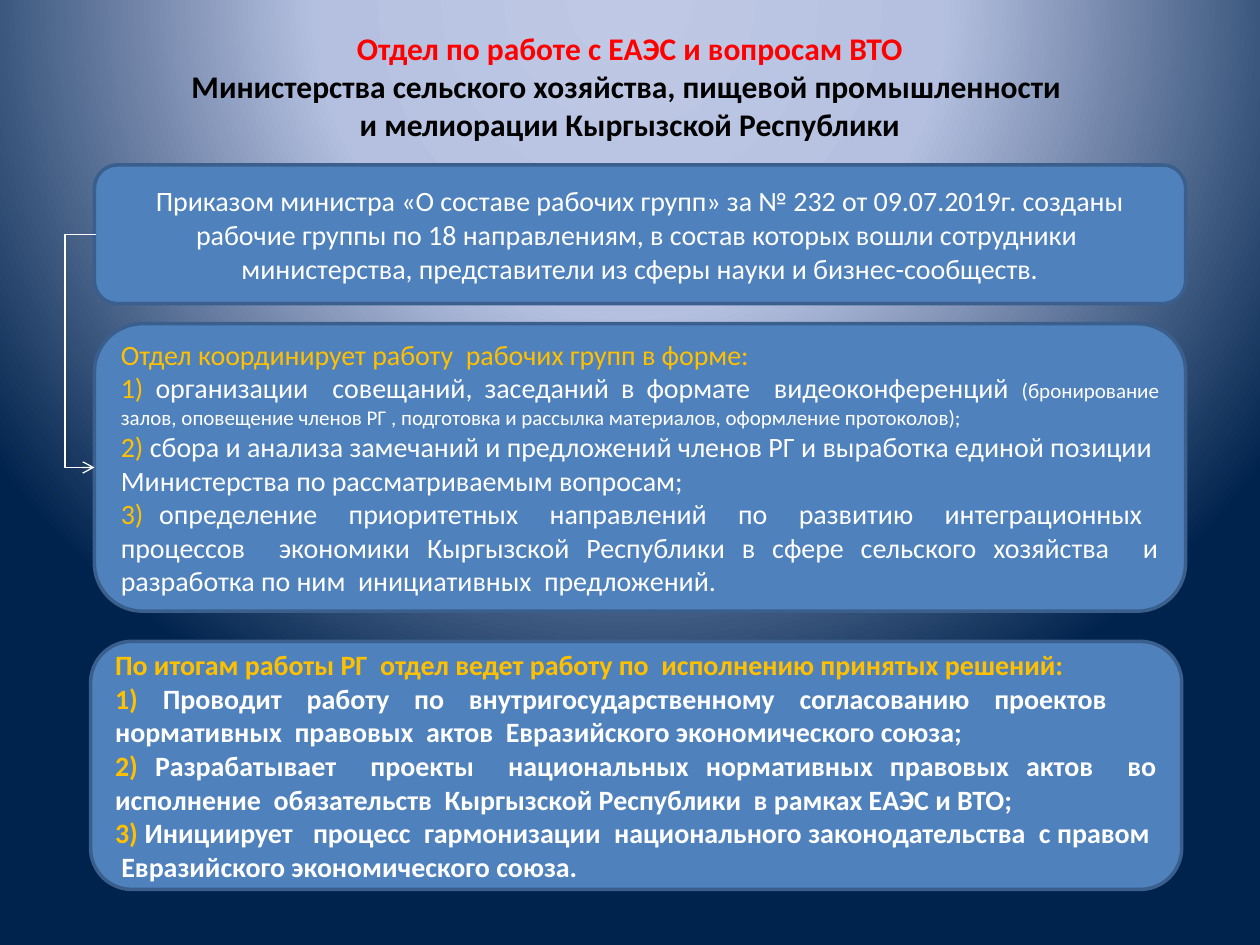
"""Build the slide about the EAEU and WTO department and its working groups."""
from dataclasses import dataclass

from pptx import Presentation
from pptx.dml.color import RGBColor
from pptx.enum.shapes import MSO_CONNECTOR as Link, MSO_SHAPE as Shape
from pptx.enum.text import MSO_ANCHOR as Anchor, MSO_AUTO_SIZE as AutoSize, PP_ALIGN as Align
from pptx.oxml import parse_xml
from pptx.oxml.ns import nsdecls
from pptx.util import Pt

RED, BLACK, WHITE, GOLD = "FF0000", "000000", "FFFFFF", "FFC000"
BLUE, DARK_BLUE = "4F81BD", "3A5F8C"
GRADIENT = ((0, "BFC9E5"), (40, "B5C0E0"), (100, "00234D"))


@dataclass(frozen=True)
class Span:
    text: str
    color: str = WHITE
    size: float = 16


@dataclass(frozen=True)
class Panel:
    left: float
    top: float
    height: float
    align: Align
    paras: tuple[tuple[Span, ...], ...]
    bold: bool = False
    width: float = 623.5


TITLE = (
    Span("Отдел по работе с ЕАЭС и вопросам ВТО", RED, 18),
    Span("Министерства сельского хозяйства, пищевой промышленности ", BLACK, 18),
    Span("и мелиорации Кыргызской Республики", BLACK, 18),
)

PANELS = (
    Panel(54, 94.3, 79.2, Align.CENTER, (
        (Span("Приказом министра «О составе рабочих групп» за № 232 от 09.07.2019г. созданы "
              "рабочие группы по 18 направлениям, в состав которых вошли сотрудники  "
              "министерства, представители из сферы науки и бизнес-сообществ."),),
    )),
    Panel(54, 185, 164.2, Align.JUSTIFY, (
        (Span("Отдел координирует работу  рабочих групп в форме:", GOLD),),
        (Span("1)", GOLD),
         Span(" организации  совещаний, заседаний в формате  видеоконференций "),
         Span("(бронирование залов, оповещение членов РГ , подготовка и рассылка "
              "материалов, оформление протоколов);", size=12)),
        (Span("2)", GOLD),
         Span(" сбора и анализа замечаний и предложений членов РГ и выработка единой "
              "позиции  Министерства по рассматриваемым вопросам;")),
        (Span("3)", GOLD),
         Span(" определение  приоритетных  направлений  по  развитию  интеграционных  "
              "процессов  экономики Кыргызской Республики в сфере сельского хозяйства  "
              "и разработка по ним  инициативных  предложений.")),
    )),
    Panel(51.8, 366.5, 141.8, Align.JUSTIFY, (
        (Span("По итогам работы РГ  отдел ведет работу по  исполнению принятых решений:", GOLD),),
        (Span("1) ", GOLD),
         Span("Проводит работу по внутригосударственному согласованию проектов   "
              "нормативных  правовых  актов  Евразийского экономического союза;")),
        (Span("2) ", GOLD),
         Span("Разрабатывает  проекты  национальных нормативных правовых актов  во "
              "исполнение  обязательств  Кыргызской Республики  в рамках ЕАЭС и ВТО;")),
        (Span("3) ", GOLD),
         Span("Инициирует   процесс  гармонизации  национального законодательства  "
              "с правом   Евразийского экономического союза.")),
    ), bold=True),
)


def rgb(value: str) -> RGBColor:
    return RGBColor.from_string(value)


def apply(target, values: dict) -> None:
    for name, value in values.items():
        setattr(target, name, value)


def add_span(para, span: Span, bold: bool) -> None:
    run = para.add_run()
    run.text = span.text
    apply(run.font, {"name": "Calibri", "size": Pt(span.size), "bold": bold})
    run.font.color.rgb = rgb(span.color)


def paint_background(page) -> None:
    page.background.fill.solid()
    solid = page._element.xpath(".//p:bgPr/a:solidFill")[0]
    stops = "".join(
        f'<a:gs pos="{pos * 1000}"><a:srgbClr val="{color}"/></a:gs>' for pos, color in GRADIENT)
    solid.getparent().replace(solid, parse_xml(
        f'<a:gradFill {nsdecls("a")} rotWithShape="1"><a:gsLst>{stops}</a:gsLst>'
        '<a:path path="circle"><a:fillToRect l="50000" t="-80000" r="50000" b="180000"/>'
        '</a:path></a:gradFill>'))


def fill_title(page) -> None:
    title = page.shapes.title
    apply(title, {"left": Pt(36), "top": Pt(9.4), "width": Pt(648), "height": Pt(79.2)})
    frame = title.text_frame
    apply(frame, {"word_wrap": True, "auto_size": AutoSize.NONE, "vertical_anchor": Anchor.MIDDLE})
    para = frame.paragraphs[0]
    para.alignment = Align.CENTER
    for index, span in enumerate(TITLE):
        if index:
            para.add_line_break()
        add_span(para, span, True)


def add_panel(page, panel: Panel) -> None:
    box = page.shapes.add_shape(
        Shape.ROUNDED_RECTANGLE, Pt(panel.left), Pt(panel.top), Pt(panel.width), Pt(panel.height))
    box.shadow.inherit = False
    box.fill.solid()
    box.fill.fore_color.rgb = rgb(BLUE)
    box.line.color.rgb = rgb(DARK_BLUE)
    box.line.width = Pt(2)
    frame = box.text_frame
    apply(frame, {"word_wrap": True, "vertical_anchor": Anchor.MIDDLE})
    for index, spans in enumerate(panel.paras):
        para = frame.add_paragraph() if index else frame.paragraphs[0]
        para.alignment = panel.align
        for span in spans:
            add_span(para, span, panel.bold)


def add_side_arrow(page, source: Panel, target: Panel, reach: int = 18) -> None:
    """Bend an arrow out to the left by reach points between two panels."""
    start, end = (panel.top + panel.height / 2 for panel in (source, target))
    arrow = page.shapes.add_connector(
        Link.ELBOW, Pt(source.left + 1), Pt(start), Pt(target.left), Pt(end))
    arrow.line.color.rgb = rgb(WHITE)
    arrow.line.width = Pt(0.75)
    arrow.line._get_or_add_ln().append(parse_xml(f'<a:tailEnd {nsdecls("a")} type="arrow"/>'))
    properties = arrow._element.spPr
    properties.append(parse_xml(f'<a:effectLst {nsdecls("a")}/>'))
    guides = properties.xpath("./a:prstGeom/a:avLst")[0]
    guides.append(parse_xml(
        f'<a:gd {nsdecls("a")} name="adj1" fmla="val {reach * 100000}"/>'))


def main() -> None:
    deck = Presentation()
    apply(deck, {"slide_width": Pt(720), "slide_height": Pt(540)})
    page = deck.slides.add_slide(deck.slide_layouts[5])
    paint_background(page)
    fill_title(page)
    for panel in PANELS:
        add_panel(page, panel)
    add_side_arrow(page, PANELS[0], PANELS[1])
    deck.save("out.pptx")


if __name__ == "__main__":
    main()
